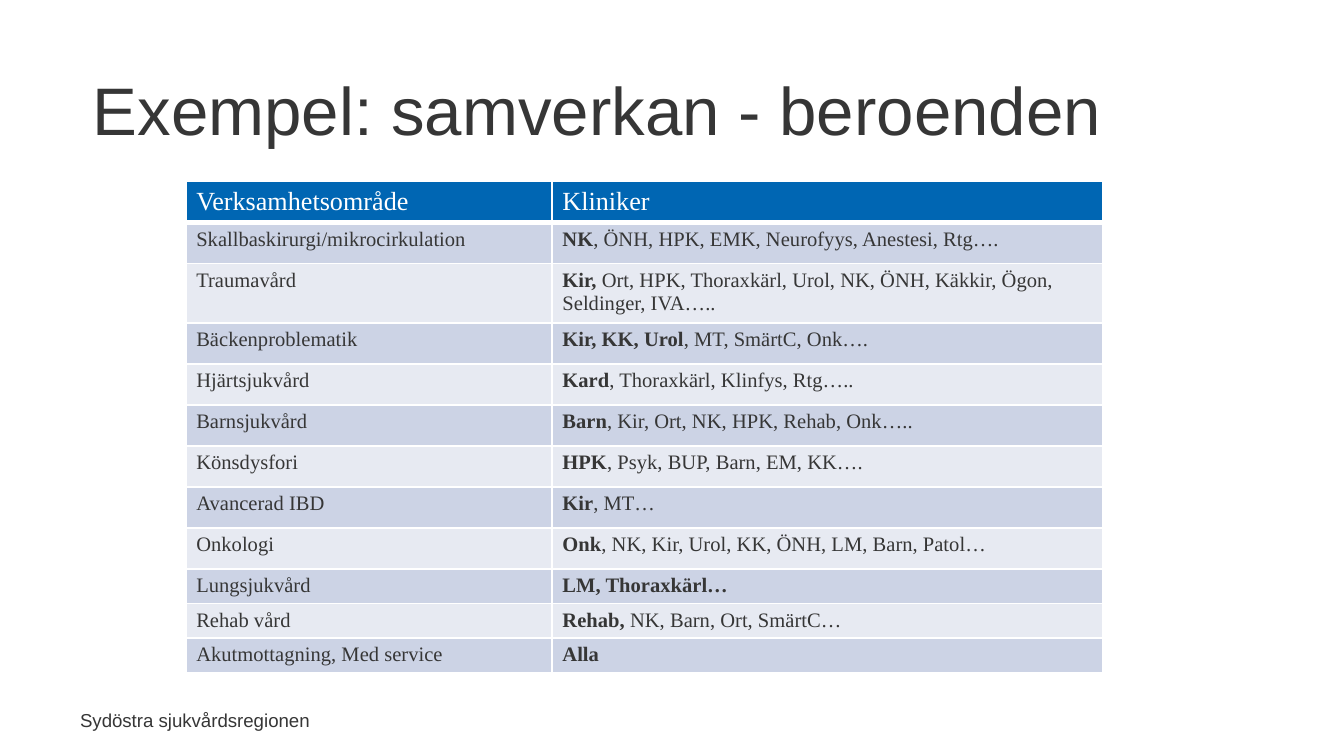
from lxml.etree import SubElement
from pptx import Presentation
from pptx.dml.color import RGBColor
from pptx.enum.text import MSO_ANCHOR as Anchor, MSO_AUTO_SIZE as AutoSize, PP_ALIGN as Align
from pptx.oxml.ns import qn
from pptx.util import Cm, Pt

COLORS = {"text": "363636", "white": "FFFFFF", "header": "0066B3", "dark_band": "CCD3E5", "light_band": "E7EAF2"}
TITLE = "Exempel: samverkan - beroenden"
FOOTER = "Sydöstra sjukvårdsregionen"
HEADER = ("Verksamhetsområde", "Kliniker")
STANDARD, TALL, LOW = 0.775, 1.12, 0.65
AREAS = [
    ("Skallbaskirurgi/mikrocirkulation", "NK", ", ÖNH, HPK, EMK, Neurofyys, Anestesi, Rtg….", STANDARD),
    ("Traumavård", "Kir, ", "Ort, HPK, Thoraxkärl, Urol, NK, ÖNH, Käkkir, Ögon, Seldinger, IVA…..", TALL),
    ("Bäckenproblematik", "Kir, KK, Urol", ", MT, SmärtC, Onk….", STANDARD),
    ("Hjärtsjukvård", "Kard", ", Thoraxkärl, Klinfys, Rtg…..", STANDARD),
    ("Barnsjukvård", "Barn", ", Kir, Ort, NK, HPK, Rehab, Onk…..", STANDARD),
    ("Könsdysfori", "HPK", ", Psyk, BUP, Barn, EM, KK….", STANDARD),
    ("Avancerad IBD", "Kir", ", MT…", STANDARD),
    ("Onkologi", "Onk", ", NK, Kir, Urol, KK, ÖNH, LM, Barn, Patol…", STANDARD),
    ("Lungsjukvård", "LM, Thoraxkärl…", "", LOW),
    ("Rehab vård", "Rehab, ", "NK, Barn, Ort, SmärtC…", LOW),
    ("Akutmottagning, Med service", "Alla", "", LOW),
]
COLUMN_WIDTHS = (6.92, 10.42)


def add_span(para, text, size, font, color, bold=False):
    span = para.add_run()
    span.text = text
    span.font.size, span.font.name, span.font.bold = Pt(size), font, bold
    span.font.color.rgb = RGBColor.from_string(COLORS[color])


def add_borders(cell, bottom):
    properties = cell._tc.get_or_add_tcPr()
    for index, (side, width) in enumerate((("L", 1), ("R", 1), ("T", 1), ("B", bottom))):
        line = SubElement(properties, qn(f"a:ln{side}"), w=str(Pt(width)))
        fill = SubElement(line, qn("a:solidFill"))
        SubElement(fill, qn("a:srgbClr"), val=COLORS["white"])
        properties.insert(index, line)


def fill_cell(cell, spans, size, color, fill, bottom=1):
    cell.margin_left = cell.margin_right = Cm(0.2)
    cell.margin_top = cell.margin_bottom = Cm(0.1)
    cell.fill.solid()
    cell.fill.fore_color.rgb = RGBColor.from_string(COLORS[fill])
    add_borders(cell, bottom)
    for text, bold in spans:
        if text:
            add_span(cell.text_frame.paragraphs[0], text, size, "Times New Roman", color, bold)


def add_area_table(page):
    heights = [STANDARD] + [area[-1] for area in AREAS]
    table = page.shapes.add_table(len(heights), len(HEADER), Cm(3.51), Cm(3.43),
                                  Cm(sum(COLUMN_WIDTHS)), Cm(sum(heights))).table
    for column, width in zip(table.columns, COLUMN_WIDTHS):
        column.width = Cm(width)
    for row, height in zip(table.rows, heights):
        row.height = Cm(height)
    for index, text in enumerate(HEADER):
        fill_cell(table.cell(0, index), [(text, False)], 14, "white", "header", 3)
    for index, (area, lead, others, _) in enumerate(AREAS, 1):
        band = "dark_band" if index % 2 else "light_band"
        fill_cell(table.cell(index, 0), [(area, False)], 11, "text", band)
        fill_cell(table.cell(index, 1), [(lead, True), (others, False)], 11, "text", band)


def main():
    """Build the slide of areas and the clinics they depend on."""
    deck = Presentation()
    deck.slide_width, deck.slide_height = Cm(25.4), Cm(14.28)
    page = deck.slides.add_slide(deck.slide_layouts[5])

    title = page.shapes.title
    title.left, title.top, title.width, title.height = Cm(1.5), Cm(0.74), Cm(23.39), Cm(2.64)
    title.text_frame.vertical_anchor = Anchor.MIDDLE
    title.text_frame.paragraphs[0].alignment = Align.LEFT
    add_span(title.text_frame.paragraphs[0], TITLE, 36, "Arial", "text")

    add_area_table(page)

    footer = page.shapes.add_textbox(Cm(1.22), Cm(13.26), Cm(4.88), Cm(0.68)).text_frame
    footer.word_wrap = False
    footer.auto_size = AutoSize.SHAPE_TO_FIT_TEXT
    footer.paragraphs[0].alignment = Align.RIGHT
    add_span(footer.paragraphs[0], FOOTER, 10, "Arial", "text")
    deck.save("out.pptx")


if __name__ == "__main__":
    main()
